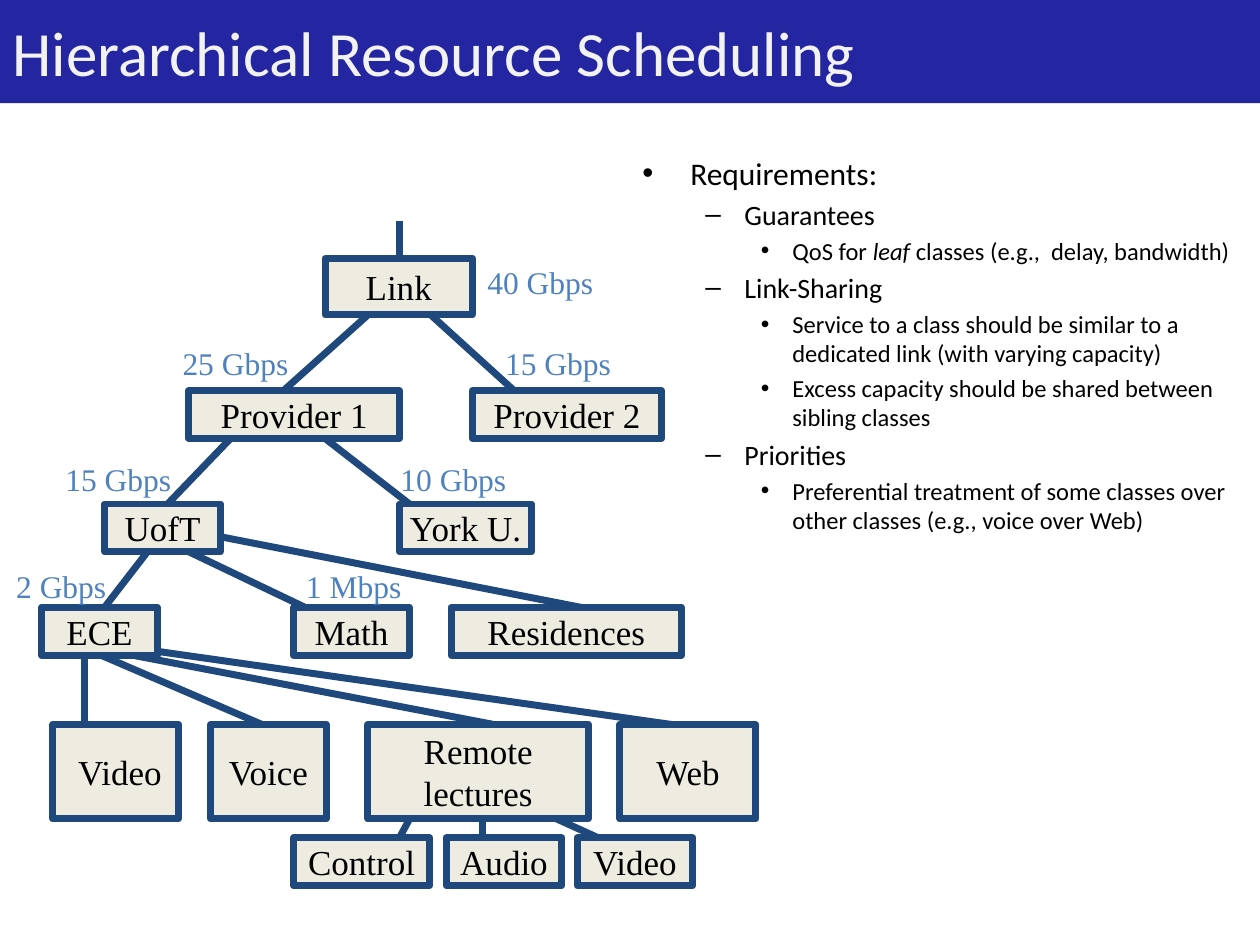
import pptx
import pptx.dml.color
import pptx.enum.shapes
import pptx.enum.text
import pptx.oxml.ns
import pptx.util
from dataclasses import dataclass
from lxml import etree

Inches, Pt = pptx.util.Inches, pptx.util.Pt
ALIGN, ANCHOR = pptx.enum.text.PP_ALIGN, pptx.enum.text.MSO_ANCHOR


@dataclass(frozen=True)
class Theme:
    sans: str = "Calibri"
    serif: str = "Times New Roman"
    banner: str = "2425A0"
    banner_text: str = "F2F2F2"
    ink: str = "000000"
    node: str = "EEECE1"
    edge: str = "1F497D"
    rate: str = "4F81BD"
    title_size: int = 36
    node_size: int = 20
    rate_size: int = 18
    edge_width: int = 4
    bullet_sizes: tuple = (18, 16, 14)


THEME = Theme()

# Bullet levels: mark, text indent, hanging indent
LEVELS = (("•", 0.38, 0.38), ("–", 0.81, 0.31), ("•", 1.19, 0.25))

# Each line is a level and its (text, italic) spans
REQUIREMENTS = (
    (0, [("Requirements:", False)]),
    (1, [("Guarantees", False)]),
    (2, [("QoS for ", False), ("leaf", True),
         (" classes (e.g.,  delay, bandwidth)", False)]),
    (1, [("Link-Sharing", False)]),
    (2, [("Service to a class should be similar to a dedicated link "
          "(with varying capacity)", False)]),
    (2, [("Excess capacity should be shared between sibling classes", False)]),
    (1, [("Priorities", False)]),
    (2, [("Preferential treatment of some classes over other classes "
          "(e.g., voice over Web)", False)]),
)

# Tree rows: top, height, and (label, left, width) of each node
ROWS = (
    (0.3, 0.45, [("Link", 2.58, 1.17)]),
    (1.35, 0.38, [("Provider 1", 1.5, 1.67), ("Provider 2", 3.75, 1.5)]),
    (2.25, 0.38, [("UofT", 0.83, 0.92), ("York U.", 3.17, 1.05)]),
    (3.07, 0.38, [("ECE", 0.33, 0.92), ("Math", 2.33, 0.92),
                  ("Residences", 3.58, 1.83)]),
    (4.0, 0.75, [(" Video", 0.42, 1), ("Voice", 1.67, 0.92),
                 ("Remote lectures", 2.92, 1.75), ("Web", 4.92, 1.08)]),
    (4.9, 0.38, [("Control", 2.33, 1.08), ("Audio", 3.54, 0.92),
                 ("Video", 4.58, 0.92)]),
)

# Edges from the bottom of each row to the top of the next: (start x, end x)
EDGES = (
    [(2.92, 2.25), (3.42, 4.08)],
    [(1.83, 1.33), (2.58, 3.25)],
    [(1.17, 0.83), (1.5, 2.42)],
    [(0.67, 0.67), (0.8, 2.08), (1.05, 3.92)],
    [(3.25, 3.17), (3.83, 3.83), (4.42, 4.75)],
)

# Root stub and the edges that leave a node at its side
FREE_EDGES = ((3.17, 0, 3.17, 0.3), (1.75, 2.51, 4.66, 3.08),
              (1.25, 3.42, 5.33, 4.0))

# Rates: text, left, top
RATES = (
    ("40 Gbps", 3.77, 0.29), ("25 Gbps", 1.35, 0.93), ("15 Gbps", 3.91, 0.93),
    ("15 Gbps", 0.42, 1.85), ("10 Gbps", 3.08, 1.85),
    ("2 Gbps", 0.03, 2.7), ("1 Mbps", 2.33, 2.7),
)


def color(value):
    return pptx.dml.color.RGBColor.from_string(value)


def apply(target, values):
    for name, value in values.items():
        setattr(target, name, value)


def add_span(para, text, face, size, ink, italic=False):
    span = para.add_run()
    span.text = text
    apply(span.font, {"name": face, "size": Pt(size), "italic": italic})
    span.font.color.rgb = color(ink)


def add_rect(page, box, fill):
    rect = page.shapes.add_shape(
        pptx.enum.shapes.MSO_SHAPE.RECTANGLE, *map(Inches, box))
    rect.shadow.inherit = False
    rect.fill.solid()
    rect.fill.fore_color.rgb = color(fill)
    rect.line.fill.background()
    rect.text_frame.vertical_anchor = ANCHOR.MIDDLE
    return rect


def add_edge(page, x1, y1, x2, y2):
    edge = page.shapes.add_connector(
        pptx.enum.shapes.MSO_CONNECTOR.STRAIGHT, *map(Inches, (x1, y1, x2, y2)))
    edge.line.color.rgb = color(THEME.edge)
    edge.line.width = Pt(THEME.edge_width)
    etree.SubElement(edge._element.spPr, pptx.oxml.ns.qn("a:effectLst"))


def add_node(page, box, label):
    node = add_rect(page, box, THEME.node)
    node.line.color.rgb = color(THEME.edge)
    node.line.width = Pt(THEME.edge_width)
    node.text_frame.word_wrap = label == "Remote lectures"
    para = node.text_frame.paragraphs[0]
    para.alignment = ALIGN.CENTER
    add_span(para, label, THEME.serif, THEME.node_size, THEME.ink)


def add_title(page, box):
    banner = add_rect(page, box, THEME.banner)
    banner.text_frame.word_wrap = True
    para = banner.text_frame.paragraphs[0]
    para.alignment = ALIGN.LEFT
    add_span(para, "Hierarchical Resource Scheduling", THEME.sans,
             THEME.title_size, THEME.banner_text)


def add_requirements(page, box):
    frame = page.shapes.add_textbox(*map(Inches, box)).text_frame
    frame.word_wrap = True
    for index, (level, spans) in enumerate(REQUIREMENTS):
        para = frame.add_paragraph() if index else frame.paragraphs[0]
        size = THEME.bullet_sizes[level]
        apply(para, {"level": level, "space_before": Pt(0.2 * size)})
        mark, indent, hang = LEVELS[level]
        props = para._p.get_or_add_pPr()
        props.set("marL", str(Inches(indent)))
        props.set("indent", str(-Inches(hang)))
        etree.SubElement(props, pptx.oxml.ns.qn("a:buFont"), typeface="Arial")
        etree.SubElement(props, pptx.oxml.ns.qn("a:buChar"), char=mark)
        for text, italic in spans:
            add_span(para, text, THEME.sans, size, THEME.ink, italic)


def add_tree(page, box):
    left, top = box[:2]
    # Edges lie behind the nodes
    edges = list(FREE_EDGES)
    for upper, lower, pairs in zip(ROWS, ROWS[1:], EDGES):
        edges += [(start, upper[0] + upper[1], end, lower[0])
                  for start, end in pairs]
    for x1, y1, x2, y2 in edges:
        add_edge(page, left + x1, top + y1, left + x2, top + y2)
    # Nodes
    for row_top, height, nodes in ROWS:
        for label, x, width in nodes:
            add_node(page, (left + x, top + row_top, width, height), label)
    # Rates
    for text, x, y in RATES:
        rate = page.shapes.add_textbox(
            *map(Inches, (left + x, top + y, 1.15, 0.4)))
        rate.text_frame.word_wrap = True
        add_span(rate.text_frame.paragraphs[0], text, THEME.serif,
                 THEME.rate_size, THEME.rate)


def main():
    deck = pptx.Presentation()
    apply(deck, {"slide_width": Inches(10), "slide_height": Inches(7.5)})
    page = deck.slides.add_slide(deck.slide_layouts[6])
    add_title(page, (0, -0.01, 10.01, 0.83))
    add_requirements(page, (5, 1.17, 4.92, 4.42))
    add_tree(page, (0, 1.75, 6, 5.28))
    deck.save("out.pptx")


if __name__ == "__main__":
    main()
